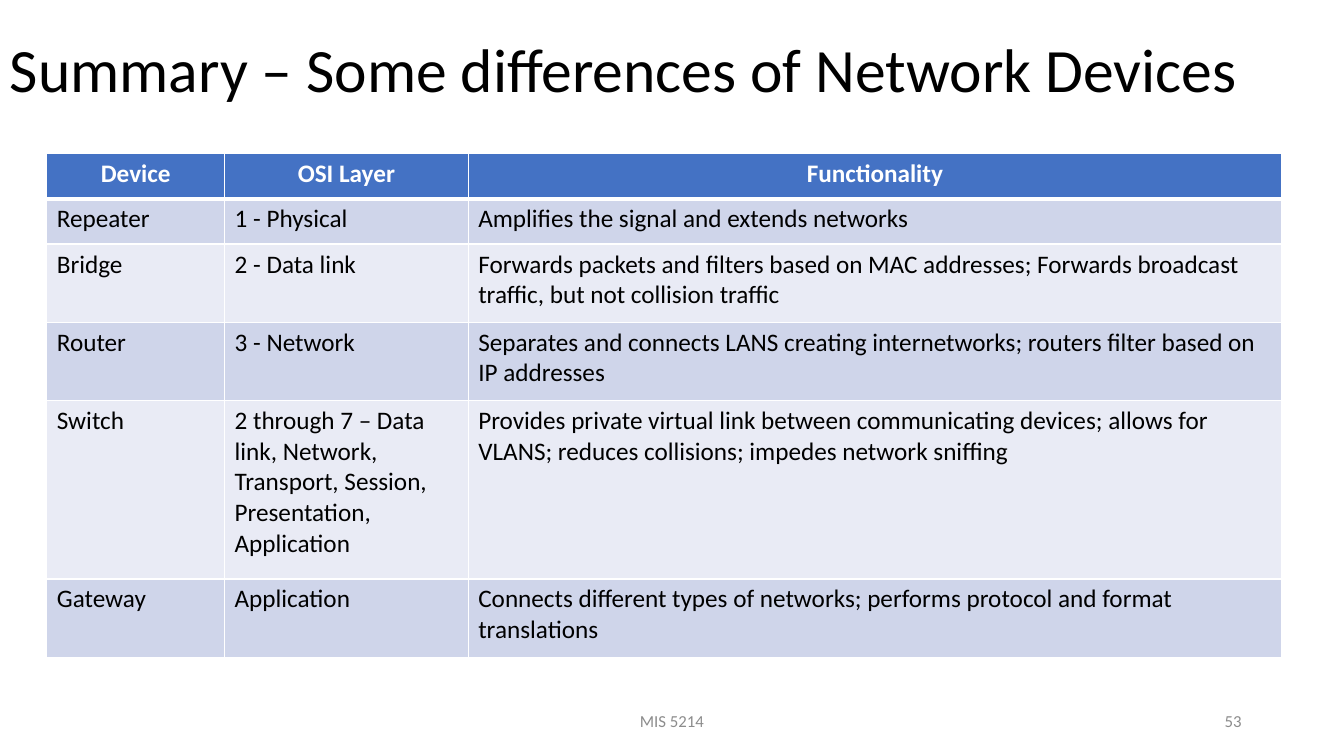
"""Build the slide that summarises the differences of network devices."""

from dataclasses import dataclass

import lxml.etree
import pptx
import pptx.dml.color
import pptx.enum.text
import pptx.oxml.ns
import pptx.presentation
import pptx.slide
import pptx.table
import pptx.text.text
import pptx.util
from pptx.dml.color import RGBColor
from pptx.enum.text import MSO_ANCHOR, PP_ALIGN
from pptx.util import Cm

FONT_NAME = "Calibri"
BLACK = RGBColor(0x00, 0x00, 0x00)
WHITE = RGBColor(0xFF, 0xFF, 0xFF)
GRAY = RGBColor(0x8C, 0x8C, 0x8C)
HEADER_BLUE = RGBColor(0x44, 0x72, 0xC4)
BAND_DARK = RGBColor(0xCF, 0xD5, 0xEA)
BAND_LIGHT = RGBColor(0xE9, 0xEB, 0xF5)

THIN_BORDER = 1
THICK_BORDER = 3


@dataclass(frozen=True)
class Label:
    """A text box, with lengths in centimetres."""

    text: str
    left: float
    top: float
    width: float
    height: float
    size: int
    color: RGBColor
    alignment: PP_ALIGN
    line_spacing: float = 1.0


@dataclass(frozen=True)
class DeviceRow:
    """A table row, with its height in centimetres."""

    device: str
    layer: str
    functionality: str
    height: float


LABELS = (
    Label("Summary – Some differences of Network Devices",
          0, 0, 33.87, 3.68, 44, BLACK, PP_ALIGN.LEFT, 0.9),
    Label("MIS 5214", 11.22, 17.65, 11.43, 1.01, 12, GRAY, PP_ALIGN.CENTER),
    Label("53", 23.92, 17.65, 7.62, 1.01, 12, GRAY, PP_ALIGN.RIGHT),
)

ROWS = (
    DeviceRow("Device", "OSI Layer", "Functionality", 1.14),
    DeviceRow("Repeater", "1 - Physical",
              "Amplifies the signal and extends networks", 1.14),
    DeviceRow("Bridge", "2 - Data link",
              "Forwards packets and filters based on MAC addresses; "
              "Forwards broadcast traffic, but not collision traffic", 1.97),
    DeviceRow("Router", "3 - Network",
              "Separates and connects LANS creating internetworks; "
              "routers filter based on IP addresses", 1.97),
    DeviceRow("Switch",
              "2 through 7 – Data link, Network, Transport, Session, "
              "Presentation, Application",
              "Provides private virtual link between communicating devices; "
              "allows for VLANS; reduces collisions; impedes network sniffing", 4.5),
    DeviceRow("Gateway", "Application",
              "Connects different types of networks; "
              "performs protocol and format translations", 1.97),
)
COLUMN_WIDTHS = (4.48, 6.14, 20.5)
TABLE_LEFT = 1.18
TABLE_TOP = 3.87


def write_text(frame: pptx.text.text.TextFrame, text: str, size: int, color: RGBColor,
               alignment: PP_ALIGN, bold: bool = False) -> pptx.text.text._Paragraph:
    """Write one formatted run in the first paragraph of a frame."""
    paragraph = frame.paragraphs[0]
    paragraph.alignment = alignment
    run = paragraph.add_run()
    run.text = text
    run.font.name = FONT_NAME
    run.font.size = pptx.util.Pt(size)
    run.font.bold = bold
    run.font.color.rgb = color
    return paragraph


def add_label(slide: pptx.slide.Slide, label: Label) -> None:
    """Add a vertically centred text box."""
    shape = slide.shapes.add_textbox(
        Cm(label.left), Cm(label.top), Cm(label.width), Cm(label.height))
    frame = shape.text_frame
    frame.word_wrap = True
    frame.vertical_anchor = MSO_ANCHOR.MIDDLE
    paragraph = write_text(frame, label.text, label.size, label.color, label.alignment)
    paragraph.line_spacing = label.line_spacing


def add_borders(cell: pptx.table._Cell, top: int, bottom: int) -> None:
    """Draw white borders around a cell, with widths in points."""
    properties = cell._tc.get_or_add_tcPr()
    widths = {"a:lnL": THIN_BORDER, "a:lnR": THIN_BORDER, "a:lnT": top, "a:lnB": bottom}
    for tag, width in widths.items():
        line = lxml.etree.SubElement(
            properties, pptx.oxml.ns.qn(tag), w=str(pptx.util.Pt(width)))
        fill = lxml.etree.SubElement(line, pptx.oxml.ns.qn("a:solidFill"))
        lxml.etree.SubElement(fill, pptx.oxml.ns.qn("a:srgbClr"), val=str(WHITE))


def fill_cell(cell: pptx.table._Cell, text: str, row_index: int) -> None:
    """Style a cell by its row and write its text."""
    is_header = row_index == 0
    band = BAND_DARK if row_index % 2 else BAND_LIGHT
    add_borders(cell,
                top=THICK_BORDER if row_index == 1 else THIN_BORDER,
                bottom=THICK_BORDER if is_header else THIN_BORDER)
    cell.fill.solid()
    cell.fill.fore_color.rgb = HEADER_BLUE if is_header else band
    write_text(cell.text_frame, text, 18, WHITE if is_header else BLACK,
               PP_ALIGN.CENTER if is_header else PP_ALIGN.LEFT, is_header)


def add_device_table(slide: pptx.slide.Slide) -> None:
    """Add the table of network devices."""
    table = slide.shapes.add_table(
        len(ROWS), len(COLUMN_WIDTHS), Cm(TABLE_LEFT), Cm(TABLE_TOP),
        Cm(sum(COLUMN_WIDTHS)), Cm(sum(row.height for row in ROWS))).table
    for column, width in zip(table.columns, COLUMN_WIDTHS):
        column.width = Cm(width)
    for row_index, row in enumerate(ROWS):
        table.rows[row_index].height = Cm(row.height)
        for column_index, text in enumerate((row.device, row.layer, row.functionality)):
            fill_cell(table.cell(row_index, column_index), text, row_index)


def main() -> None:
    """Create and save the presentation."""
    presentation = pptx.Presentation()
    presentation.slide_width = Cm(33.87)
    presentation.slide_height = Cm(19.05)
    slide = presentation.slides.add_slide(presentation.slide_layouts[6])
    for label in LABELS:
        add_label(slide, label)
    add_device_table(slide)
    presentation.save("out.pptx")


if __name__ == "__main__":
    main()
